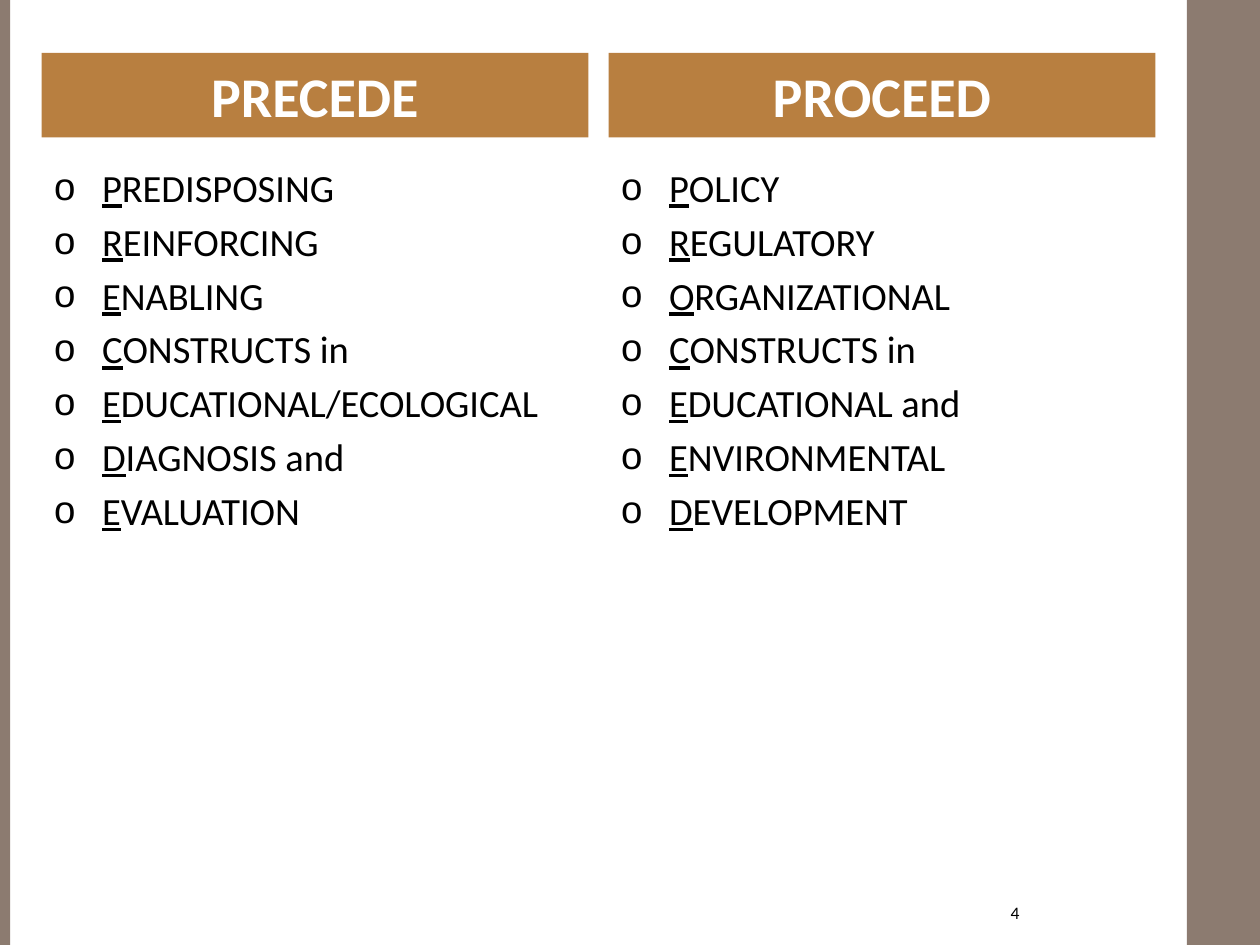
import pptx
import pptx.dml.color
import pptx.enum.shapes
import pptx.enum.text
import pptx.oxml
import pptx.oxml.ns
import pptx.util
from pptx.util import Inches

TAUPE = pptx.dml.color.RGBColor(0x8C, 0x7B, 0x70)
BRONZE = pptx.dml.color.RGBColor(0xB8, 0x7F, 0x40)
WHITE = pptx.dml.color.RGBColor(0xFF, 0xFF, 0xFF)
BLACK = pptx.dml.color.RGBColor(0x00, 0x00, 0x00)

HEADING_FONT = {"name": "Calibri", "size": pptx.util.Pt(32), "bold": True}
TERM_FONT = {"name": "Calibri", "size": pptx.util.Pt(22), "bold": False}
NUMBER_FONT = {"name": "Calibri", "size": pptx.util.Pt(10), "bold": False}

COLUMNS = {
    "PRECEDE": [
        "PREDISPOSING", "REINFORCING", "ENABLING", "CONSTRUCTS in",
        "EDUCATIONAL/ECOLOGICAL", "DIAGNOSIS and", "EVALUATION",
    ],
    "PROCEED": [
        "POLICY", "REGULATORY", "ORGANIZATIONAL", "CONSTRUCTS in",
        "EDUCATIONAL and", "ENVIRONMENTAL", "DEVELOPMENT",
    ],
}


def set_format(target, values):
    """Set each named attribute on the target."""
    for name, value in values.items():
        setattr(target, name, value)


def add_run(paragraph, text, font, color, underline=False):
    """Add a formatted run to the paragraph."""
    run = paragraph.add_run()
    run.text = text
    set_format(run.font, font)
    run.font.underline = underline
    run.font.color.rgb = color


def place(shape, left, top, width, height):
    """Move the shape to a box given in inches."""
    box = {"left": left, "top": top, "width": width, "height": height}
    set_format(shape, {side: Inches(length) for side, length in box.items()})


def prepare_frame(shape, anchor):
    """Return the shape's text frame, wrapped, unscaled and anchored."""
    frame = shape.text_frame
    set_format(frame, {
        "word_wrap": True,
        "auto_size": pptx.enum.text.MSO_AUTO_SIZE.NONE,
        "vertical_anchor": anchor,
    })
    return frame


def add_side_band(slide, left, width, height):
    """Add a full-height band behind the slide content."""
    band = slide.shapes.add_shape(
        pptx.enum.shapes.MSO_SHAPE.RECTANGLE,
        Inches(left), Inches(0), Inches(width), Inches(height))
    band.shadow.inherit = False
    band.fill.solid()
    band.fill.fore_color.rgb = TAUPE
    band.line.fill.background()
    slide.shapes._spTree.insert(2, band._element)


def fill_heading(heading, text, left, top, width, height):
    """Place a column heading on its coloured bar."""
    place(heading, left, top, width, height)
    heading.fill.solid()
    heading.fill.fore_color.rgb = BRONZE
    frame = prepare_frame(heading, pptx.enum.text.MSO_ANCHOR.MIDDLE)
    paragraph = frame.paragraphs[0]
    paragraph.alignment = pptx.enum.text.PP_ALIGN.CENTER
    add_run(paragraph, text, HEADING_FONT, WHITE)


def fill_terms(body, terms, left, top, width, height):
    """Place a bulleted list whose initials are underlined."""
    place(body, left, top, width, height)
    frame = prepare_frame(body, pptx.enum.text.MSO_ANCHOR.TOP)
    for index, term in enumerate(terms):
        paragraph = frame.add_paragraph() if index else frame.paragraphs[0]
        add_run(paragraph, term[0], TERM_FONT, BLACK, underline=True)
        add_run(paragraph, term[1:], TERM_FONT, BLACK)
        properties = paragraph._p.get_or_add_pPr()
        properties.set("marL", str(Inches(0.38)))
        properties.set("indent", str(Inches(-0.38)))
        properties.append(pptx.oxml.parse_xml(
            f'<a:buChar {pptx.oxml.ns.nsdecls("a")} char="o"/>'))


def add_page_number(slide, number, left, top, width, height):
    """Add the right-aligned page number."""
    page_number = slide.shapes.add_textbox(
        Inches(left), Inches(top), Inches(width), Inches(height))
    frame = prepare_frame(page_number, pptx.enum.text.MSO_ANCHOR.MIDDLE)
    paragraph = frame.paragraphs[0]
    paragraph.alignment = pptx.enum.text.PP_ALIGN.RIGHT
    add_run(paragraph, number, NUMBER_FONT, BLACK)


def main():
    """Build the comparison slide and save it."""
    presentation = pptx.Presentation()
    set_format(presentation, {"slide_width": Inches(10), "slide_height": Inches(7.5)})
    slide = presentation.slides.add_slide(
        presentation.slide_layouts.get_by_name("Comparison"))
    title = slide.shapes.title._element
    title.getparent().remove(title)

    add_side_band(slide, 0, 0.08, 7.5)
    add_side_band(slide, 9.42, 0.58, 7.5)
    for column, (heading, terms) in enumerate(COLUMNS.items()):
        left = 0.33 + 4.5 * column
        first = 1 + 2 * column
        fill_heading(slide.placeholders[first], heading, left, 0.42, 4.34, 0.67)
        fill_terms(slide.placeholders[first + 1], terms, left, 1.25, 4.33, 5.58)
    add_page_number(slide, "4", 7.11, 7.08, 1.08, 0.33)
    presentation.save("out.pptx")


if __name__ == "__main__":
    main()
